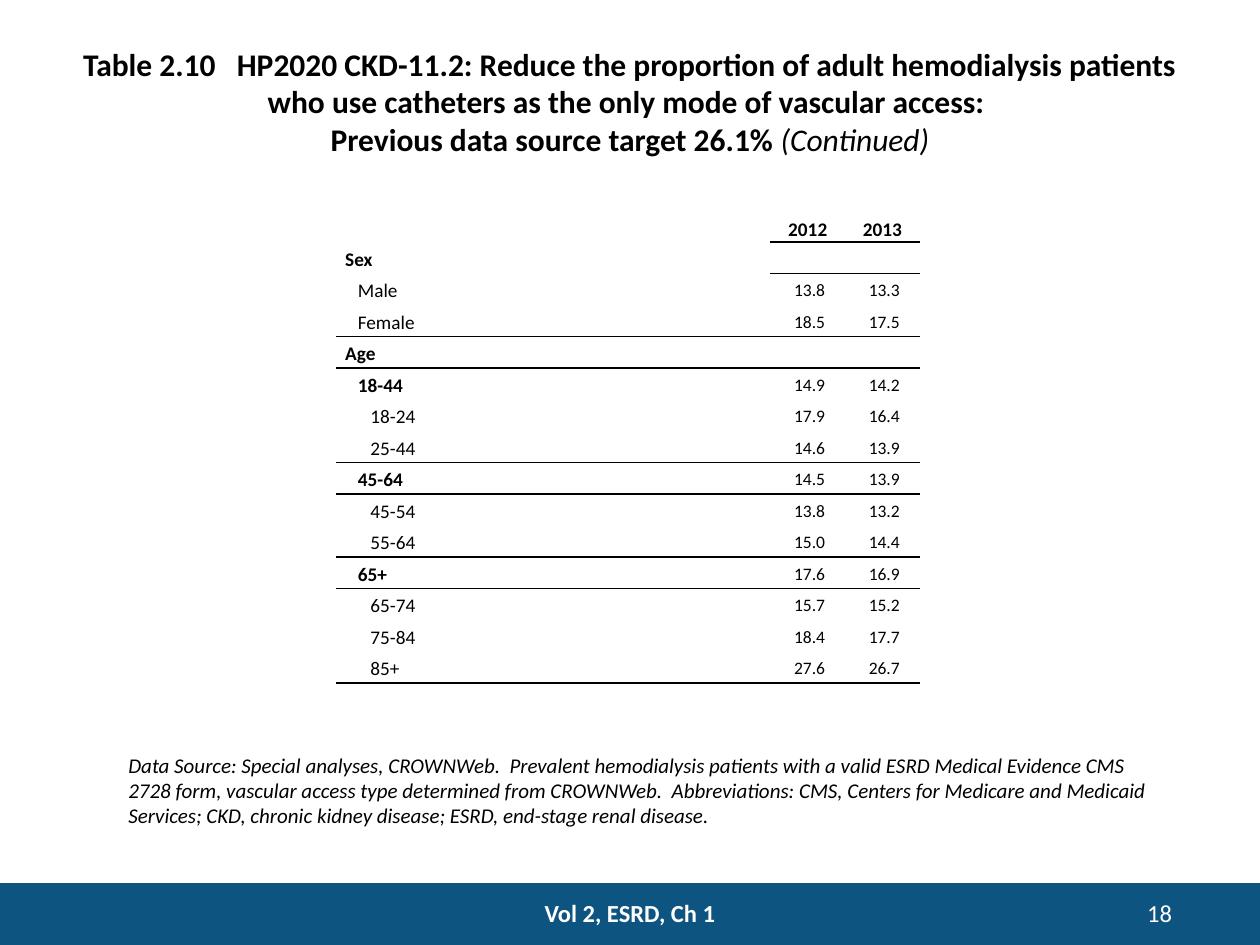
from lxml.etree import SubElement
from pptx import Presentation
from pptx.dml.color import RGBColor
from pptx.enum.shapes import MSO_SHAPE
from pptx.enum.text import MSO_ANCHOR, MSO_AUTO_SIZE, PP_ALIGN
from pptx.oxml import parse_xml
from pptx.oxml.ns import nsdecls, qn
from pptx.util import Inches, Pt

WIDE, HIGH = Inches(10), Inches(7.5)
COLS, ROWS = 100, 75
BLACK, WHITE, BLUE = "000000", "FFFFFF", "0E5480"
PLAIN = "{2D5ABB26-0587-4C30-8999-92F81FD0307C}"
LEFT, MID, RIGHT = PP_ALIGN.LEFT, PP_ALIGN.CENTER, PP_ALIGN.RIGHT

HEAD = ["", "2012", "2013"]
DATA = [
    ("Sex", 0, True),
    ("Male", 1, False, "13.8", "13.3"),
    ("Female", 1, False, "18.5", "17.5"),
    ("Age", 0, True),
    ("18-44", 1, True, "14.9", "14.2"),
    ("18-24", 2, False, "17.9", "16.4"),
    ("25-44", 2, False, "14.6", "13.9"),
    ("45-64", 1, True, "14.5", "13.9"),
    ("45-54", 2, False, "13.8", "13.2"),
    ("55-64", 2, False, "15.0", "14.4"),
    ("65+", 1, True, "17.6", "16.9"),
    ("65-74", 2, False, "15.7", "15.2"),
    ("75-84", 2, False, "18.4", "17.7"),
    ("85+", 2, False, "27.6", "26.7"),
]
RULED = {0, 3, 7, 10, 14}
TITLE = [
    "Table 2.10   HP2020 CKD-11.2: Reduce the proportion of adult hemodialysis "
    "patients who use catheters as the only mode of vascular access: ",
    "Previous data source target 26.1% ",
    "(Continued)",
]
NOTE = (
    "Data Source: Special analyses, CROWNWeb.  Prevalent hemodialysis patients "
    "with a valid ESRD Medical Evidence CMS 2728 form, vascular access type "
    "determined from CROWNWeb.  Abbreviations: CMS, Centers for Medicare and "
    "Medicaid Services; CKD, chronic kidney disease; ESRD, end-stage renal disease."
)


def tint(code):
    return RGBColor.from_string(code)


def grid(col, row, wide, high):
    x, y = WIDE / COLS, HIGH / ROWS
    return int(col * x), int(row * y), int(wide * x), int(high * y)


def style(item, form):
    for key, value in form.items():
        setattr(item, key, value)


def write(para, text, size, hue=BLACK, bold=False, slant=False):
    run = para.add_run()
    run.text = text
    style(run.font, {"name": "Calibri", "size": Pt(size), "bold": bold, "italic": slant})
    run.font.color.rgb = tint(hue)


def label(slide, box, text, size, align=LEFT, **look):
    frame = slide.shapes.add_textbox(*box).text_frame
    frame.word_wrap = True
    para = frame.paragraphs[0]
    para.alignment = align
    write(para, text, size, **look)


def title(slide, box):
    shape = slide.shapes.title
    style(shape, dict(zip(("left", "top", "width", "height"), box)))
    frame = shape.text_frame
    style(frame, {"word_wrap": True, "auto_size": MSO_AUTO_SIZE.SHAPE_TO_FIT_TEXT})
    para = frame.paragraphs[0]
    para.alignment = MID
    write(para, TITLE[0], 18, bold=True)
    para.add_line_break()
    write(para, TITLE[1], 18, bold=True)
    write(para, TITLE[2], 18, slant=True)


def rule(cell, side):
    line = parse_xml(
        f'<a:{side} {nsdecls("a")} w="12700"><a:solidFill><a:srgbClr val="{BLACK}"/>'
        f'</a:solidFill></a:{side}>'
    )
    cell._tc.get_or_add_tcPr().insert(0, line)


def fill(cell, text, size, align, pad, anchor, bold=False, level=0, after=0):
    names = ("margin_left", "margin_top", "margin_right", "margin_bottom")
    style(cell, dict(zip(names, map(Inches, pad))))
    cell.vertical_anchor = anchor
    para = cell.text_frame.paragraphs[0]
    style(para, {"alignment": align, "line_spacing": 1.15, "space_after": Pt(after)})
    if level:
        form = para._p.get_or_add_pPr()
        form.set("marL", str(Inches(0.1)))
        form.set("indent", str(Inches(0.1 * (level - 1))))
    if text:
        write(para, text, size, bold=bold)
    else:
        SubElement(para._p, qn("a:endParaRPr"), sz=str(size * 100))


def rates(slide, box):
    count = len(DATA) + 1
    table = slide.shapes.add_table(count, 3, *box).table
    style(table, {"first_row": False, "horz_banding": False})
    table._tbl.tblPr.find(qn("a:tableStyleId")).text = PLAIN
    for col, share in zip(table.columns, (0.744, 0.128, 0.128)):
        col.width = int(box[2] * share)
    for row in table.rows:
        row.height = box[3] // count
    side, inner = (0.07, 0, 0.07, 0), (0, 0.03, 0.16, 0)
    for col, text in enumerate(HEAD):
        fill(table.cell(0, col), text, 11, MID, side, MSO_ANCHOR.BOTTOM,
             bold=True, after=10 if text else 0)
    for row, (name, level, bold, *values) in enumerate(DATA, 1):
        fill(table.cell(row, 0), name, 11, LEFT, side, MSO_ANCHOR.MIDDLE, bold, level)
        for col, text in enumerate(values or ["", ""], 1):
            fill(table.cell(row, col), text, 10, RIGHT, inner, MSO_ANCHOR.TOP,
                 after=10 if text else 0)
    for row in range(count):
        for col in range(3):
            cell = table.cell(row, col)
            cell.fill.background()
            if row in RULED and (row or col):
                rule(cell, "lnB")
            if row - 1 in RULED and (row > 1 or col):
                rule(cell, "lnT")


def footer(slide, box):
    band = slide.shapes.add_shape(MSO_SHAPE.RECTANGLE, *box)
    band.shadow.inherit = False
    band.fill.solid()
    band.fill.fore_color.rgb = tint(BLUE)
    band.line.fill.background()
    left, top, wide, high = box
    base = top + int(high * 0.14)
    for x, share, text, align, bold in (
        (0.84, 0.1, "18", RIGHT, False),
        (0.39, 0.22, "Vol 2, ESRD, Ch 1", MID, True),
    ):
        spot = left + int(wide * x), base, int(wide * share), int(high * 0.66)
        label(slide, spot, text, 14, align, hue=WHITE, bold=bold)


def main():
    deck = Presentation()
    style(deck, {"slide_width": WIDE, "slide_height": HIGH})
    slide = deck.slides.add_slide(deck.slide_layouts[5])
    footer(slide, grid(0, 70.1, 100, 5))
    rates(slide, grid(26.7, 16.7, 46.3, 37.5))
    label(slide, grid(9.2, 59.2, 84.2, 7.1), NOTE, 12, slant=True)
    title(slide, grid(5, 3, 90, 10.1))
    deck.save("out.pptx")


if __name__ == "__main__":
    main()
